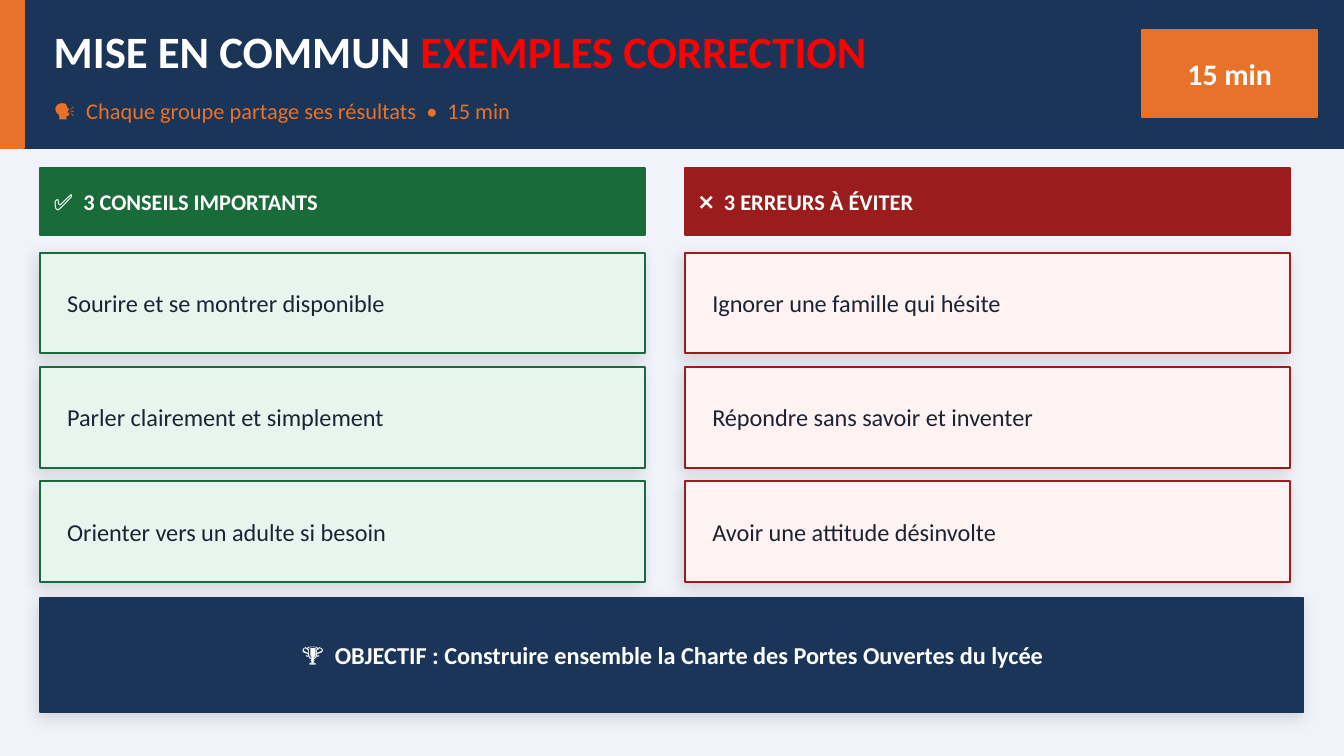
from lxml import etree
from pptx import Presentation
from pptx.dml.color import RGBColor
from pptx.enum.shapes import MSO_SHAPE
from pptx.enum.text import MSO_ANCHOR, PP_ALIGN
from pptx.oxml.ns import qn
from pptx.util import Inches, Pt

RECTANGLE = MSO_SHAPE.RECTANGLE
MIDDLE = MSO_ANCHOR.MIDDLE
LEFT, CENTER = PP_ALIGN.LEFT, PP_ALIGN.CENTER

FONT = "Calibri"
NAVY, ORANGE, WHITE, RED, INK = "1A3557", "E8722A", "FFFFFF", "FF0000", "1A2433"
BACKGROUND = "F0F4FA"

TITLE = [("MISE EN COMMUN ", WHITE), ("EXEMPLES CORRECTION", RED)]
SUBTITLE = "🗣️  Chaque groupe partage ses résultats  •  15 min"
DURATION = "15 min"
COLUMNS = [
    {
        "heading": "✅  3 CONSEILS IMPORTANTS",
        "strong": "1A6B3A",
        "pale": "E8F5EE",
        "cards": [
            "Sourire et se montrer disponible",
            "Parler clairement et simplement",
            "Orienter vers un adulte si besoin",
        ],
    },
    {
        "heading": "❌  3 ERREURS À ÉVITER",
        "strong": "9B1C1C",
        "pale": "FEF2F2",
        "cards": [
            "Ignorer une famille qui hésite",
            "Répondre sans savoir et inventer",
            "Avoir une attitude désinvolte",
        ],
    },
]
GOAL = "🏆  OBJECTIF : Construire ensemble la Charte des Portes Ouvertes du lycée"

SLIDE_W = 10
SLIDE_H = SLIDE_W * 9 / 16
HEADER_H = 1.1
MARGIN = 0.3
COLUMN_W, COLUMN_GAP = 4.5, 0.3
HEADING_TOP, HEADING_H = 1.25, 0.5
CARDS_TOP, CARD_H, CARD_GAP = 1.88, 0.75, 0.1


def color(hex_code):
    return RGBColor.from_string(hex_code)


def inset(box, dx, dy):
    """Shrink a (left, top, width, height) box on every side."""
    left, top, width, height = box
    return left + dx, top + dy, width - 2 * dx, height - 2 * dy


def add_soft_shadow(panel):
    effects = panel._element.spPr.find(qn("a:effectLst"))
    shadow = etree.SubElement(
        effects, qn("a:outerShdw"), blurRad=str(Pt(8)), dist=str(Pt(3)),
        dir=str(135 * 60000), algn="bl", rotWithShape="0")
    black = etree.SubElement(shadow, qn("a:srgbClr"), val="000000")
    etree.SubElement(black, qn("a:alpha"), val="13000")


def add_panel(slide, box, fill, border=None, raised=False):
    panel = slide.shapes.add_shape(RECTANGLE, *map(Inches, box))
    panel.fill.solid()
    panel.fill.fore_color.rgb = color(fill)
    panel.line.color.rgb = color(border or fill)
    panel.line.width = Pt(1)
    panel.shadow.inherit = False
    if raised:
        add_soft_shadow(panel)


def add_label(slide, box, runs, size, bold=False, align=LEFT):
    """Add one line of text made of (words, colour) runs."""
    frame = slide.shapes.add_textbox(*map(Inches, box)).text_frame
    frame.word_wrap = True
    frame.vertical_anchor = MIDDLE
    frame.margin_left = frame.margin_right = 0
    frame.margin_top = frame.margin_bottom = 0
    line = frame.paragraphs[0]
    line.alignment = align
    line.font.name = FONT
    line.font.size = Pt(size)
    line.font.bold = bold
    for words, hex_code in runs:
        run = line.add_run()
        run.text = words
        run.font.color.rgb = color(hex_code)


def add_header(slide):
    add_panel(slide, (0, 0, SLIDE_W, HEADER_H), NAVY)
    add_panel(slide, (0, 0, 0.18, HEADER_H), ORANGE)
    add_label(slide, (0.4, 0.1, 7, 0.55), TITLE, 24, bold=True)
    add_label(slide, (0.4, 0.65, 7, 0.35), [(SUBTITLE, ORANGE)], 12)
    badge = (8.5, 0.22, 1.3, 0.65)
    add_panel(slide, badge, ORANGE)
    add_label(slide, badge, [(DURATION, WHITE)], 16, bold=True, align=CENTER)


def add_column(slide, left, column):
    heading = (left, HEADING_TOP, COLUMN_W, HEADING_H)
    add_panel(slide, heading, column["strong"])
    add_label(slide, inset(heading, 0.1, 0), [(column["heading"], WHITE)], 12, bold=True)
    for row, advice in enumerate(column["cards"]):
        card = (left, CARDS_TOP + row * (CARD_H + CARD_GAP), COLUMN_W, CARD_H)
        add_panel(slide, card, column["pale"], column["strong"], raised=True)
        add_label(slide, inset(card, 0.2, 0.1), [(advice, INK)], 13)


def add_goal(slide):
    banner = (MARGIN, 4.45, SLIDE_W - 2 * MARGIN, 0.85)
    add_panel(slide, banner, NAVY, raised=True)
    add_label(slide, inset(banner, 0.15, 0.03), [(GOAL, WHITE)], 13, bold=True, align=CENTER)


def main():
    deck = Presentation()
    deck.slide_width, deck.slide_height = Inches(SLIDE_W), Inches(SLIDE_H)
    slide = deck.slides.add_slide(deck.slide_layouts[6])
    slide.background.fill.solid()
    slide.background.fill.fore_color.rgb = color(BACKGROUND)
    add_header(slide)
    for index, column in enumerate(COLUMNS):
        add_column(slide, MARGIN + index * (COLUMN_W + COLUMN_GAP), column)
    add_goal(slide)
    deck.save("out.pptx")


if __name__ == "__main__":
    main()
